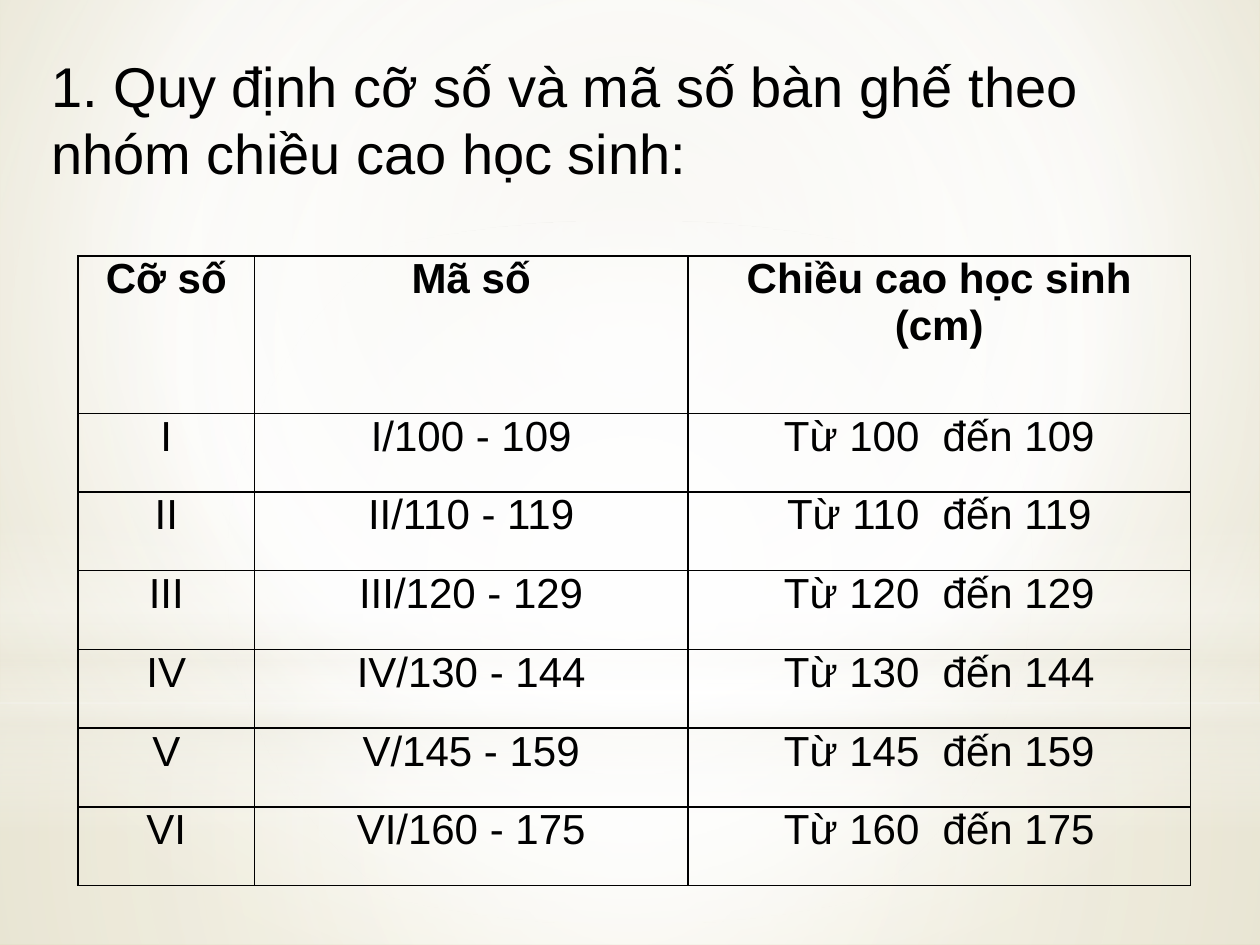
from lxml.etree import SubElement
from pptx import Presentation
from pptx.dml.color import RGBColor
from pptx.enum.shapes import MSO_SHAPE
from pptx.enum.text import MSO_ANCHOR, PP_ALIGN
from pptx.oxml import parse_xml
from pptx.oxml.ns import nsdecls, qn
from pptx.util import Inches, Pt

WIDTH, HEIGHT = Inches(10), Inches(7.5)
BLACK = RGBColor(0x00, 0x00, 0x00)
WHITE = RGBColor(0xFF, 0xFF, 0xFF)
CREAM = RGBColor(0xEE, 0xEC, 0xE1)
SAND = RGBColor(0xE7, 0xE4, 0xD4)
KHAKI = RGBColor(0xD5, 0xCC, 0x9F)

CENTRE = (50, 50, 50, 50)
TITLE_FORMAT = {"name": "Arial", "size": Pt(32), "bold": False}
HEADER_FORMAT = {"name": "Arial", "size": Pt(24), "bold": True}
BODY_FORMAT = {**HEADER_FORMAT, "bold": False}

TITLE = "1. Quy định cỡ số và mã số bàn ghế theo nhóm chiều cao học sinh:"
HEADERS = ("Cỡ số", "Mã số", "Chiều cao học sinh (cm)")
SIZES = (("I", 100, 109), ("II", 110, 119), ("III", 120, 129),
         ("IV", 130, 144), ("V", 145, 159), ("VI", 160, 175))
COLUMN_WIDTHS = (1.4, 3.44, 3.99)
ROW_UNITS = (2,) + (1,) * len(SIZES)

# Soft layers over the background: preset, top, height, stops, focus
LAYERS = (
    (MSO_SHAPE.RECTANGLE, 5.58, 1.92,
     ((0, WHITE, 91), (37, WHITE, 76), (100, CREAM, 79)), CENTRE),
    (MSO_SHAPE.RECTANGLE, 0, 5.58,
     ((0, WHITE, 89), (48, WHITE, 62), (100, CREAM, 79)), CENTRE),
    (MSO_SHAPE.RECTANGLE, 4.12, 2.5,
     ((0, WHITE, 0), (29, WHITE, 30), (45, CREAM, 40),
      (55, WHITE, 26), (65, CREAM, 60), (100, WHITE, 0)), None),
    (MSO_SHAPE.OVAL, 1.75, 5.58, ((0, WHITE, 100), (56, WHITE, 0)), CENTRE),
)


def set_gradient(owner, element, stops, focus):
    """Fill with a circular gradient, or a vertical one if focus is None."""
    owner.fill.gradient()
    stop_xml = "".join(
        f'<a:gs pos="{position * 1000}"><a:srgbClr val="{color}">'
        f'<a:alpha val="{opacity * 1000}"/></a:srgbClr></a:gs>'
        for position, color, opacity in stops)
    if focus is None:
        direction = '<a:lin ang="5400000" scaled="0"/>'
    else:
        sides = " ".join(f'{side}="{share * 1000}"'
                         for side, share in zip("ltrb", focus))
        direction = f'<a:path path="circle"><a:fillToRect {sides}/></a:path>'
    gradient = parse_xml(
        f'<a:gradFill {nsdecls("a")} rotWithShape="1">'
        f'<a:gsLst>{stop_xml}</a:gsLst>{direction}</a:gradFill>')
    default = element.find(".//" + qn("a:gradFill"))
    default.getparent().replace(default, gradient)


def write_text(text_frame, text, font_format, alignment):
    paragraph = text_frame.paragraphs[0]
    paragraph.alignment = alignment
    run = paragraph.add_run()
    run.text = text
    run.font.color.rgb = BLACK
    for name, value in font_format.items():
        setattr(run.font, name, value)


def add_background(slide):
    set_gradient(slide.background, slide.element,
                 ((0, SAND, 100), (60, WHITE, 100), (100, KHAKI, 100)),
                 (20, 10, 20, 60))
    for preset, top, height, stops, focus in LAYERS:
        shape = slide.shapes.add_shape(preset, 0, Inches(top), WIDTH, Inches(height))
        shape.shadow.inherit = False
        shape.line.fill.background()
        set_gradient(shape, shape.element, stops, focus)


def add_title(slide, left, top, width, height):
    text_frame = slide.shapes.add_textbox(left, top, width, height).text_frame
    text_frame.word_wrap = True
    text_frame.vertical_anchor = MSO_ANCHOR.TOP
    text_frame.margin_top = Inches(0.1)
    write_text(text_frame, TITLE, TITLE_FORMAT, PP_ALIGN.LEFT)


def set_borders(cell):
    properties = cell._tc.get_or_add_tcPr()
    for index, side in enumerate(("lnL", "lnR", "lnT", "lnB")):
        line = parse_xml(f'<a:{side} {nsdecls("a")} w="{Pt(1)}"/>')
        fill = SubElement(line, qn("a:solidFill"))
        SubElement(fill, qn("a:srgbClr"), val=str(BLACK))
        properties.insert(index, line)


def add_size_table(slide, left, top, width, height):
    rows = [HEADERS] + [
        (size, f"{size}/{low} - {high}", f"Từ {low}  đến {high}")
        for size, low, high in SIZES]
    table = slide.shapes.add_table(
        len(rows), len(HEADERS), left, top, width, height).table
    table.first_row = table.horz_banding = False
    for column, share in zip(table.columns, COLUMN_WIDTHS):
        column.width = int(width * share / sum(COLUMN_WIDTHS))
    for row, units in zip(table.rows, ROW_UNITS):
        row.height = int(height * units / sum(ROW_UNITS))

    cell_format = {"margin_left": Inches(0.07), "margin_right": Inches(0.07),
                   "margin_top": 0, "margin_bottom": 0,
                   "vertical_anchor": MSO_ANCHOR.TOP}
    for row_index, texts in enumerate(rows):
        font_format = BODY_FORMAT if row_index else HEADER_FORMAT
        for column_index, text in enumerate(texts):
            cell = table.cell(row_index, column_index)
            for name, value in cell_format.items():
                setattr(cell, name, value)
            cell.fill.background()
            set_borders(cell)
            write_text(cell.text_frame, text, font_format, PP_ALIGN.CENTER)


def main():
    presentation = Presentation()
    presentation.slide_width, presentation.slide_height = WIDTH, HEIGHT
    slide = presentation.slides.add_slide(presentation.slide_layouts[6])
    add_background(slide)
    add_size_table(slide, Inches(0.62), Inches(2.03), Inches(8.83), Inches(5))
    add_title(slide, Inches(0.31), Inches(0.31), Inches(9.14), Inches(2.29))
    presentation.save("out.pptx")


if __name__ == "__main__":
    main()
